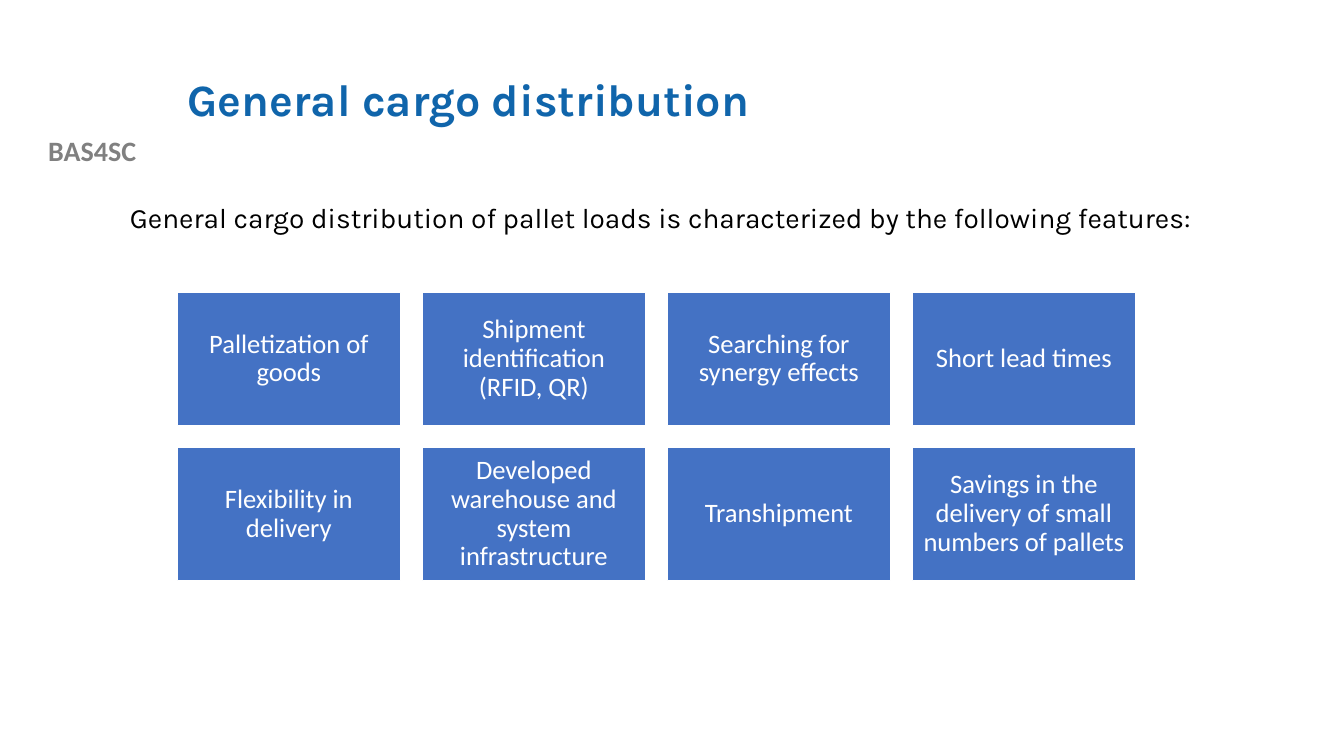
from pptx import Presentation
from pptx.dml.color import RGBColor
from pptx.enum.shapes import MSO_SHAPE as Shape
from pptx.enum.text import MSO_ANCHOR as Anchor, PP_ALIGN as Align
from pptx.util import Inches, Pt


def color(hex_value):
    return RGBColor.from_string(hex_value)


def write(frame, text, *, size, font, fill, bold=False, align=Align.LEFT,
          anchor=Anchor.TOP, spacing=0.9, inset=None):
    """Put one formatted paragraph into a text frame."""
    frame.word_wrap = True
    frame.vertical_anchor = anchor
    if inset is not None:
        frame.margin_left = frame.margin_right = Inches(inset)
        frame.margin_top = frame.margin_bottom = Inches(inset)
    paragraph = frame.paragraphs[0]
    paragraph.alignment = align
    paragraph.line_spacing = spacing
    run = paragraph.add_run()
    run.text = text
    run.font.size = Pt(size)
    run.font.name = font
    run.font.bold = bold
    run.font.color.rgb = color(fill)


class FeatureSlide:
    HEADING_FONT = "Karla"
    BODY_FONT = "Calibri"
    TITLE_BLUE = "1065AB"
    TILE_BLUE = "4472C4"
    GRAY = "808080"
    BLACK = "000000"
    WHITE = "FFFFFF"

    def __init__(self, deck):
        self.slide = deck.slides.add_slide(deck.slide_layouts[5])

    def title(self, text, left, top, width, height):
        heading = self.slide.shapes.title
        heading.left, heading.top = Inches(left), Inches(top)
        heading.width, heading.height = Inches(width), Inches(height)
        write(heading.text_frame, text, size=32, font=self.HEADING_FONT,
              fill=self.TITLE_BLUE, bold=True, anchor=Anchor.MIDDLE)

    def label(self, text, left, top, width, height, **style):
        box = self.slide.shapes.add_textbox(
            Inches(left), Inches(top), Inches(width), Inches(height))
        write(box.text_frame, text, size=20, **style)

    def tile(self, text, left, top, width, height):
        card = self.slide.shapes.add_shape(
            Shape.RECTANGLE, Inches(left), Inches(top),
            Inches(width), Inches(height))
        card.shadow.inherit = False
        card.fill.solid()
        card.fill.fore_color.rgb = color(self.TILE_BLUE)
        card.line.color.rgb = color(self.WHITE)
        card.line.width = Pt(1)
        write(card.text_frame, text, size=19, font=self.BODY_FONT,
              fill=self.WHITE, align=Align.CENTER, anchor=Anchor.MIDDLE,
              inset=0.08)

    def tile_grid(self, texts, left, top, columns, width, height, gap):
        for index, text in enumerate(texts):
            row, column = divmod(index, columns)
            self.tile(text, left + column * (width + gap),
                      top + row * (height + gap), width, height)


def main():
    deck = Presentation()
    deck.slide_width, deck.slide_height = Inches(13.33), Inches(7.5)
    page = FeatureSlide(deck)

    # Project label and title
    page.label("BAS4SC", 0, 1.28, 1.83, 0.44, font=page.BODY_FONT,
               fill=page.GRAY, bold=True, align=Align.CENTER, spacing=1.0)
    page.title("General cargo distribution", 1.76, 0.4, 10.66, 1.22)

    # Introduction
    page.label("General cargo distribution of pallet loads is characterized "
               "by the following features:", 1.19, 1.98, 11.5, 0.45,
               font=page.HEADING_FONT, fill=page.BLACK)

    # Feature tiles
    features = [
        "Palletization of goods",
        "Shipment identification (RFID, QR)",
        "Searching for synergy effects",
        "Short lead times",
        "Flexibility in delivery",
        "Developed warehouse and system infrastructure",
        "Transhipment",
        "Savings in the delivery of small numbers of pallets",
    ]
    page.tile_grid(features, left=1.76, top=2.9, columns=4,
                   width=2.21, height=1.32, gap=0.22)

    deck.save("out.pptx")


if __name__ == "__main__":
    main()
